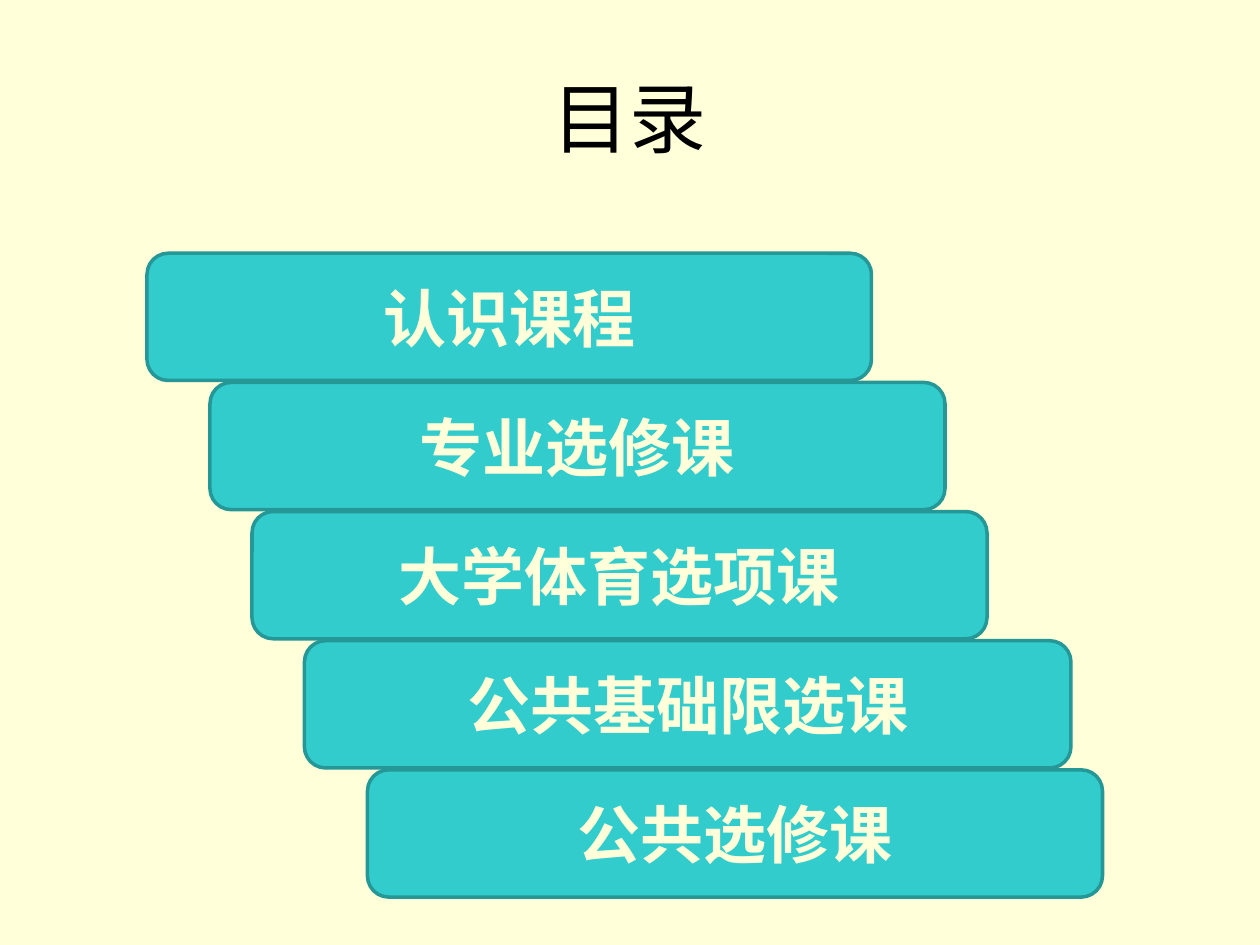
from pptx import Presentation
from pptx.dml.color import RGBColor
from pptx.enum.shapes import MSO_SHAPE
from pptx.enum.text import MSO_ANCHOR, PP_ALIGN
from pptx.oxml.ns import qn
from pptx.util import Inches, Pt

COLORS = {"background": "FFFFD9", "bar": "33CCCC", "outline": "269797", "title": "000000"}
TITLE_FORMAT = {"size": Pt(44), "name": "Noto Sans CJK SC", "bold": False}
BAR_FORMAT = {"size": Pt(36), "name": "Arial", "bold": True}

# Text, first column, number of columns
TOPICS = [
    ("认识课程", 14, 69),
    ("专业选修课", 20, 70),
    ("大学体育选项课", 24, 70),
    ("公共基础限选课", 29, 73),
    ("公共选修课", 35, 70),
]
FIRST_BAR_TOP = 2.01
BAR_PITCH = 1.025
BAR_HEIGHT = 1.01


class ContentsSlide:
    """Places elements by twelfth-of-an-inch columns and tops in inches."""

    column = Inches(1) / 12

    def __init__(self, presentation):
        self.slide = presentation.slides.add_slide(presentation.slide_layouts[6])
        background = self.slide.background.fill
        background.solid()
        background.fore_color.rgb = self.color("background")

    def color(self, name):
        return RGBColor.from_string(COLORS[name])

    def box(self, column, top, columns, height):
        return int(column * self.column), Inches(top), int(columns * self.column), Inches(height)

    def set_text(self, shape, text, color, font_format):
        frame = shape.text_frame
        frame.word_wrap = True
        frame.vertical_anchor = MSO_ANCHOR.MIDDLE
        paragraph = frame.paragraphs[0]
        paragraph.alignment = PP_ALIGN.CENTER
        run = paragraph.add_run()
        run.text = text
        for attribute, value in font_format.items():
            setattr(run.font, attribute, value)
        run.font.color.rgb = self.color(color)
        properties = run._r.get_or_add_rPr()
        properties.append(properties.makeelement(qn("a:ea"), {"typeface": font_format["name"]}))

    def title(self, text, *place):
        shape = self.slide.shapes.add_textbox(*self.box(*place))
        self.set_text(shape, text, "title", TITLE_FORMAT)

    def bar(self, text, *place):
        shape = self.slide.shapes.add_shape(MSO_SHAPE.ROUNDED_RECTANGLE, *self.box(*place))
        shape.shadow.inherit = False
        shape.fill.solid()
        shape.fill.fore_color.rgb = self.color("bar")
        shape.line.color.rgb = self.color("outline")
        shape.line.width = Pt(2)
        self.set_text(shape, text, "background", BAR_FORMAT)


def main():
    presentation = Presentation()
    presentation.slide_width = Inches(10)
    presentation.slide_height = Inches(7.5)
    contents = ContentsSlide(presentation)
    contents.title("目录", 6, 0.3, 108, 1.25)
    for index, (text, column, columns) in enumerate(TOPICS):
        contents.bar(text, column, FIRST_BAR_TOP + index * BAR_PITCH, columns, BAR_HEIGHT)
    presentation.save("out.pptx")


if __name__ == "__main__":
    main()
